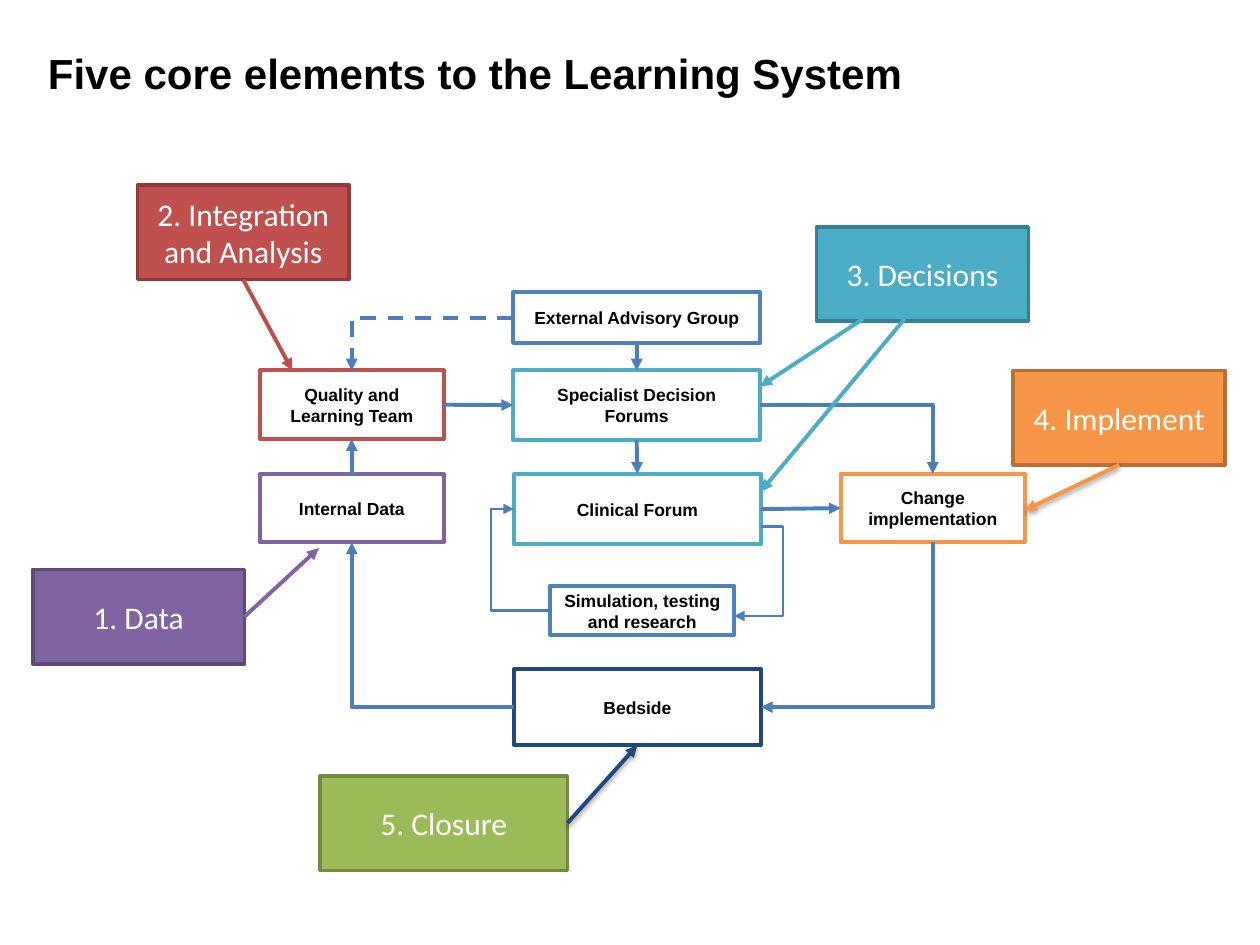
from lxml import etree
from pptx import Presentation
from pptx.dml.color import RGBColor
from pptx.enum.dml import MSO_LINE
from pptx.enum.shapes import MSO_CONNECTOR, MSO_SHAPE
from pptx.enum.text import MSO_ANCHOR, MSO_AUTO_SIZE, PP_ALIGN
from pptx.oxml.ns import qn
from pptx.util import Pt

RECT = MSO_SHAPE.RECTANGLE
STRAIGHT, ELBOW = MSO_CONNECTOR.STRAIGHT, MSO_CONNECTOR.ELBOW
DASH = MSO_LINE.DASH
TOP, MIDDLE = MSO_ANCHOR.TOP, MSO_ANCHOR.MIDDLE
LEFT, CENTER = PP_ALIGN.LEFT, PP_ALIGN.CENTER
GROW = MSO_AUTO_SIZE.SHAPE_TO_FIT_TEXT

BLACK = RGBColor(0x00, 0x00, 0x00)
WHITE = RGBColor(0xFF, 0xFF, 0xFF)
PURPLE = RGBColor(0x80, 0x64, 0xA2)
PLUM = RGBColor(0x5F, 0x4A, 0x78)
RED = RGBColor(0xC0, 0x50, 0x4D)
BRICK = RGBColor(0xBF, 0x4C, 0x48)
MAROON = RGBColor(0x8E, 0x3B, 0x39)
AQUA = RGBColor(0x4B, 0xAC, 0xC6)
TEAL = RGBColor(0x37, 0x7F, 0x92)
ORANGE = RGBColor(0xF7, 0x96, 0x46)
BROWN = RGBColor(0xB7, 0x6F, 0x34)
GREEN = RGBColor(0x9B, 0xBB, 0x59)
OLIVE = RGBColor(0x73, 0x8A, 0x42)
BLUE = RGBColor(0x4F, 0x81, 0xBD)
FLOW = RGBColor(0x4B, 0x7E, 0xBC)
NAVY = RGBColor(0x1F, 0x49, 0x7D)


def write(frame, text, font="Arial", size=10, color=BLACK, bold=True,
          align=CENTER, anchor=MIDDLE):
    frame.word_wrap = True
    frame.vertical_anchor = anchor
    line = frame.paragraphs[0]
    line.alignment = align
    run = line.add_run()
    run.text = text
    run.font.name, run.font.size = font, Pt(size)
    run.font.bold, run.font.color.rgb = bold, color


def spot(box, across, down):
    left, top, width, height = box
    return left + across * width, top + down * height


class Chart:
    def __init__(self, deck):
        self.slide = deck.slides.add_slide(deck.slide_layouts[5])
        self.shapes = self.slide.shapes

    def title(self, text, left, top, width, height):
        shape = self.shapes.title
        shape.left, shape.top = Pt(left), Pt(top)
        shape.width, shape.height = Pt(width), Pt(height)
        frame = shape.text_frame
        frame.margin_left = frame.margin_right = 0
        frame.margin_top = frame.margin_bottom = 0
        write(frame, text, size=24, align=LEFT, anchor=TOP)
        frame.auto_size = GROW

    def block(self, text, box, fill, edge, weight, **style):
        shape = self.shapes.add_shape(RECT, *map(Pt, box))
        shape.shadow.inherit = False
        shape.fill.solid()
        shape.fill.fore_color.rgb = fill
        shape.line.color.rgb = edge
        shape.line.width = Pt(weight)
        write(shape.text_frame, text, **style)

    def node(self, text, box, edge):
        self.block(text, box, WHITE, edge, 2.25)

    def label(self, text, box, fill, edge):
        self.block(text, box, fill, edge, 2, font="Calibri", size=18,
                   color=WHITE, bold=False)

    def arrow(self, start, end, color=FLOW, weight=2.25, kind=STRAIGHT,
              dash=None, shade=False):
        link = self.shapes.add_connector(kind, *map(Pt, start + end))
        link.line.color.rgb = color
        link.line.width = Pt(weight)
        if dash:
            link.line.dash_style = dash
        props = link._element.spPr
        tip = etree.SubElement(props.find(qn("a:ln")), qn("a:tailEnd"))
        tip.set("type", "triangle")
        effect = etree.SubElement(props, qn("a:effectLst"))
        if shade:
            cast = etree.SubElement(
                effect, qn("a:outerShdw"), blurRad=str(Pt(3.1)),
                dist=str(Pt(1.6)), dir="5400000", rotWithShape="0")
            tint = etree.SubElement(cast, qn("a:srgbClr"), val="000000")
            etree.SubElement(tint, qn("a:alpha"), val="38000")
        return props

    def corner(self, start, end, turn=False, dash=None):
        if turn:
            mid_x, mid_y = (start[0] + end[0]) / 2, (start[1] + end[1]) / 2
            start, end = [(mid_x + y - mid_y, mid_y - x + mid_x)
                          for x, y in (start, end)]
        props = self.arrow(start, end, kind=ELBOW, dash=dash)
        props.find(qn("a:prstGeom")).set("prst", "bentConnector2")
        if turn:
            props.find(qn("a:xfrm")).set("rot", "5400000")

    def loop(self, start, end, bend):
        props = self.arrow(start, end, weight=1.5, kind=ELBOW)
        ratio = round((bend - start[0]) / (end[0] - start[0]) * 100000)
        guides = props.find(qn("a:prstGeom")).get_or_add_avLst()
        etree.SubElement(guides, qn("a:gd"), name="adj1", fmla=f"val {ratio}")


def main():
    deck = Presentation()
    deck.slide_width, deck.slide_height = Pt(720), Pt(540)
    chart = Chart(deck)
    chart.title("Five core elements to the Learning System", 27.4, 27.4, 601, 28.8)

    tag, small, wide = (121, 54), (105.2, 39.2), 141.2
    upper, lower = 211.7, 270.8
    data = (18.7, 325.4, *tag)
    study = (78.5, 105.8, *tag)
    choice = (466.6, 129.6, *tag)
    action = (579, upper, *tag)
    closing = (183, 443.4, wide, 54)
    team = (148.4, upper, *small)
    source = (148.4, lower, *small)
    change = (480.4, lower, *small)
    group = (293.2, 167, wide, 29)
    expert = (293.2, upper, wide, 39.6)
    clinic = (293.6, lower, wide, 40.2)
    bedside = (293.6, 382.3, wide, 43.6)
    trial = (314.4, 334.8, 105.2, 28.2)

    for item in (
        ("1. Data", data, PURPLE, PLUM),
        ("2. Integration and Analysis", study, RED, MAROON),
        ("3. Decisions", choice, AQUA, TEAL),
        ("4. Implement", action, ORANGE, BROWN),
        ("5. Closure", closing, GREEN, OLIVE),
    ):
        chart.label(*item)

    for item in (
        ("Internal Data", source, PURPLE),
        ("External Advisory Group", group, BLUE),
        ("Specialist Decision Forums", expert, AQUA),
        ("Bedside", bedside, NAVY),
        ("Clinical Forum", clinic, AQUA),
        ("Change implementation", change, ORANGE),
        ("Simulation, testing and research", trial, BLUE),
        ("Quality and Learning Team", team, RED),
    ):
        chart.node(*item)

    for start, end in (
        (spot(clinic, 1, 0.5), spot(change, 0, 0.5)),
        (spot(group, 0.5, 1), spot(expert, 0.5, 0)),
        (spot(expert, 0.5, 1), spot(clinic, 0.5, 0)),
        (spot(source, 0.5, 0), spot(team, 0.5, 1)),
        (spot(team, 1, 0.5), spot(expert, 0, 0.5)),
    ):
        chart.arrow(start, end)

    chart.corner(spot(bedside, 0, 0.5), spot(source, 0.5, 1))
    chart.corner(spot(expert, 1, 0.5), spot(change, 0.5, 0))
    chart.corner(spot(change, 0.5, 1), spot(bedside, 1, 0.5), turn=True)
    chart.corner(spot(group, 0, 0.5), spot(team, 0.5, 0), dash=DASH)
    chart.loop(spot(clinic, 1, 0.75), spot(trial, 1, 0.61), 447.6)
    chart.loop(spot(trial, 0, 0.5), spot(clinic, 0, 0.5), 280.6)

    chart.arrow(spot(study, 0.5, 1), (167, upper), BRICK)
    chart.arrow((493.2, 182.2), spot(expert, 1, 0.23), AQUA)
    chart.arrow((517, 182.2), spot(clinic, 1, 0.25), AQUA)
    chart.arrow(spot(closing, 1, 0.5), spot(bedside, 0.5, 1), NAVY, shade=True)
    chart.arrow(spot(data, 1, 0.5), (182.2, 313.2), PURPLE)
    chart.arrow(spot(action, 0.5, 1), spot(change, 1, 0.53), ORANGE, shade=True)
    deck.save("out.pptx")


if __name__ == "__main__":
    main()
